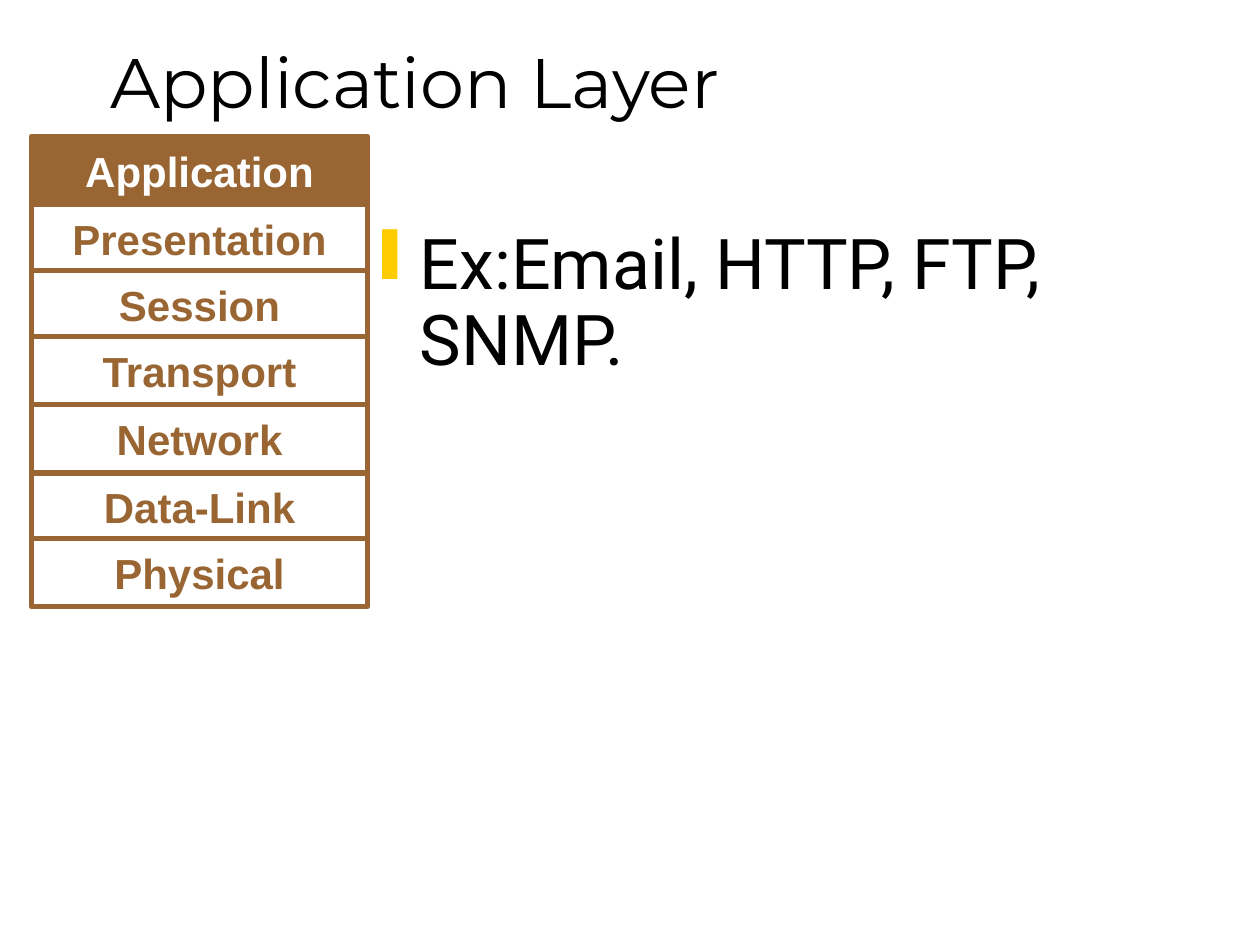
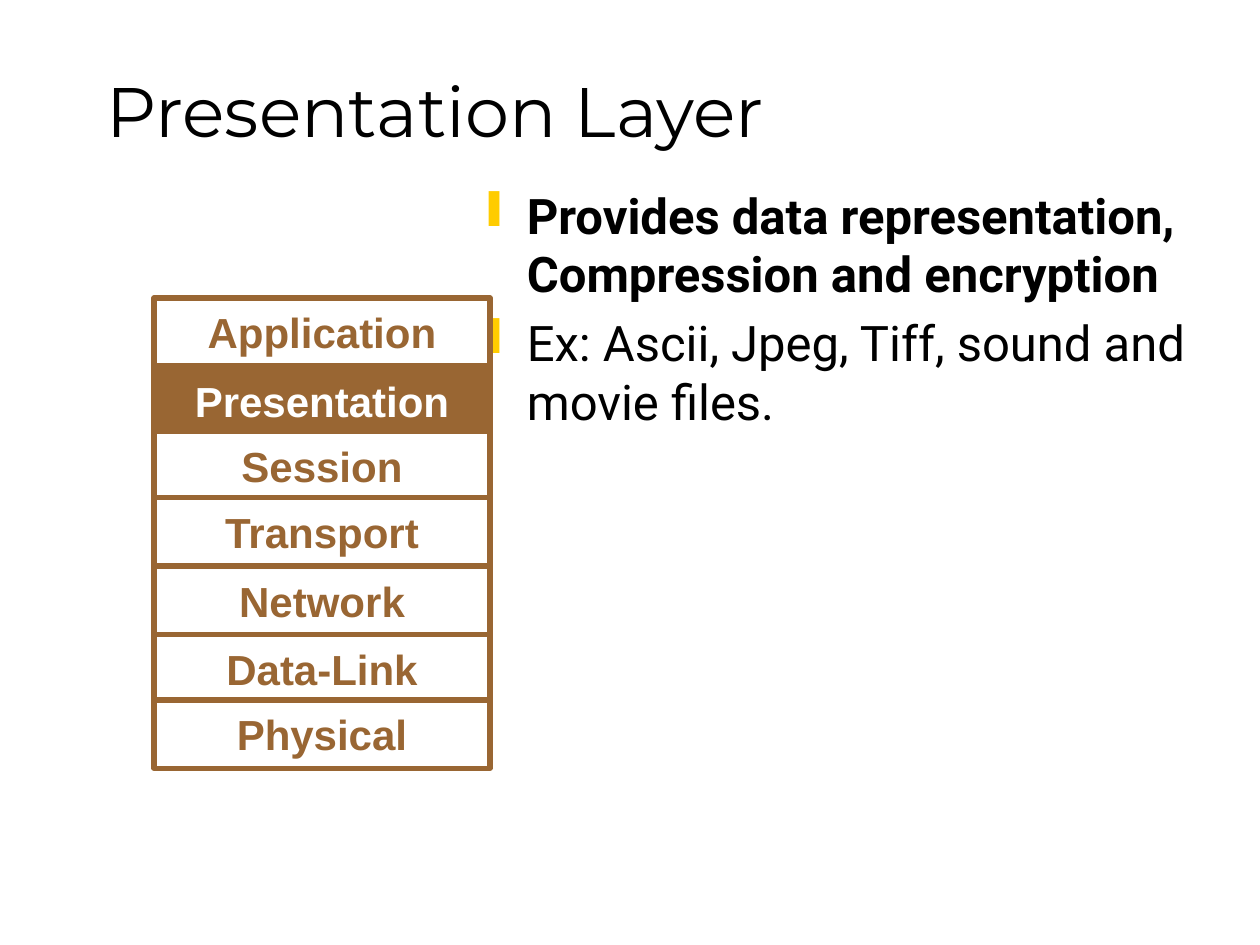
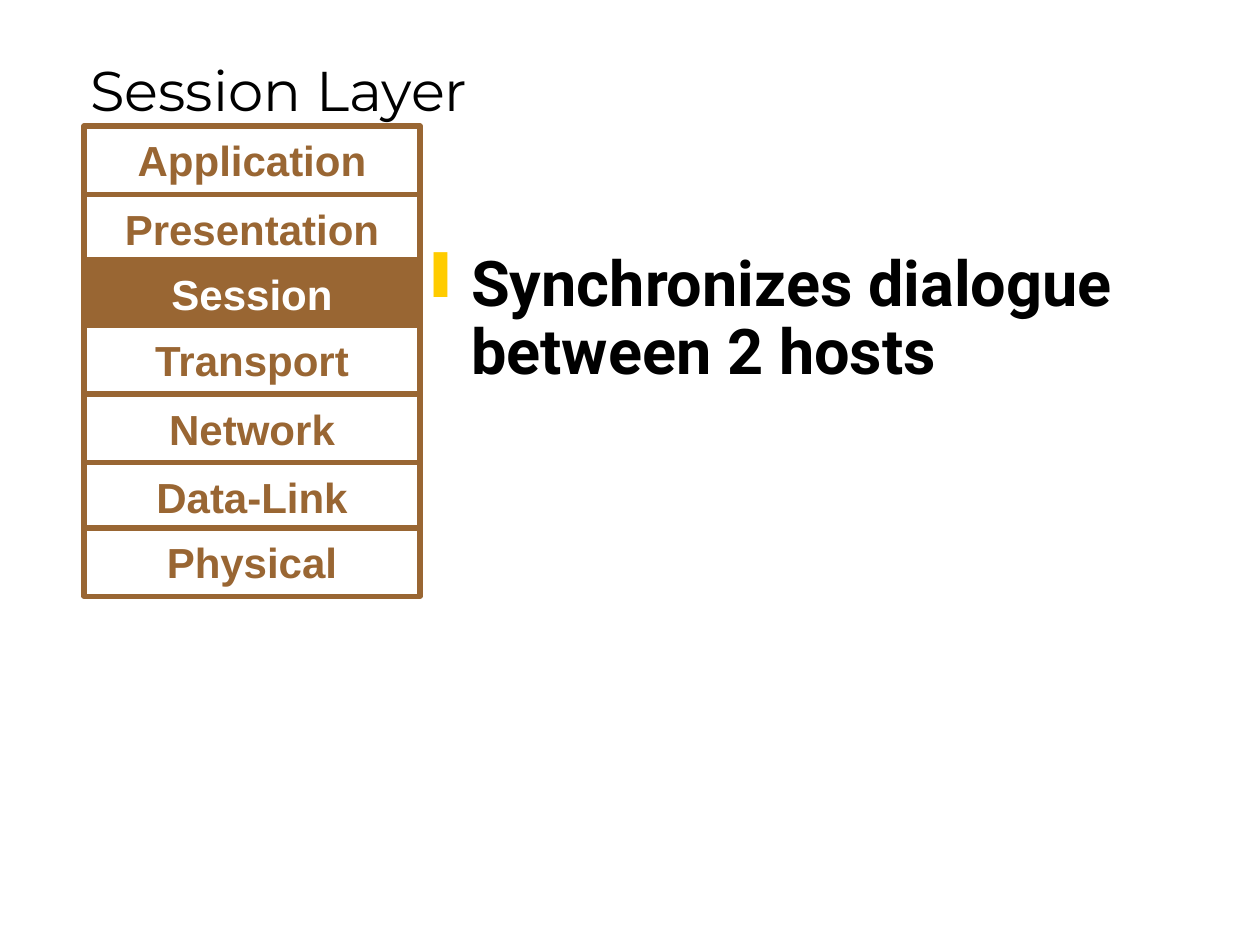
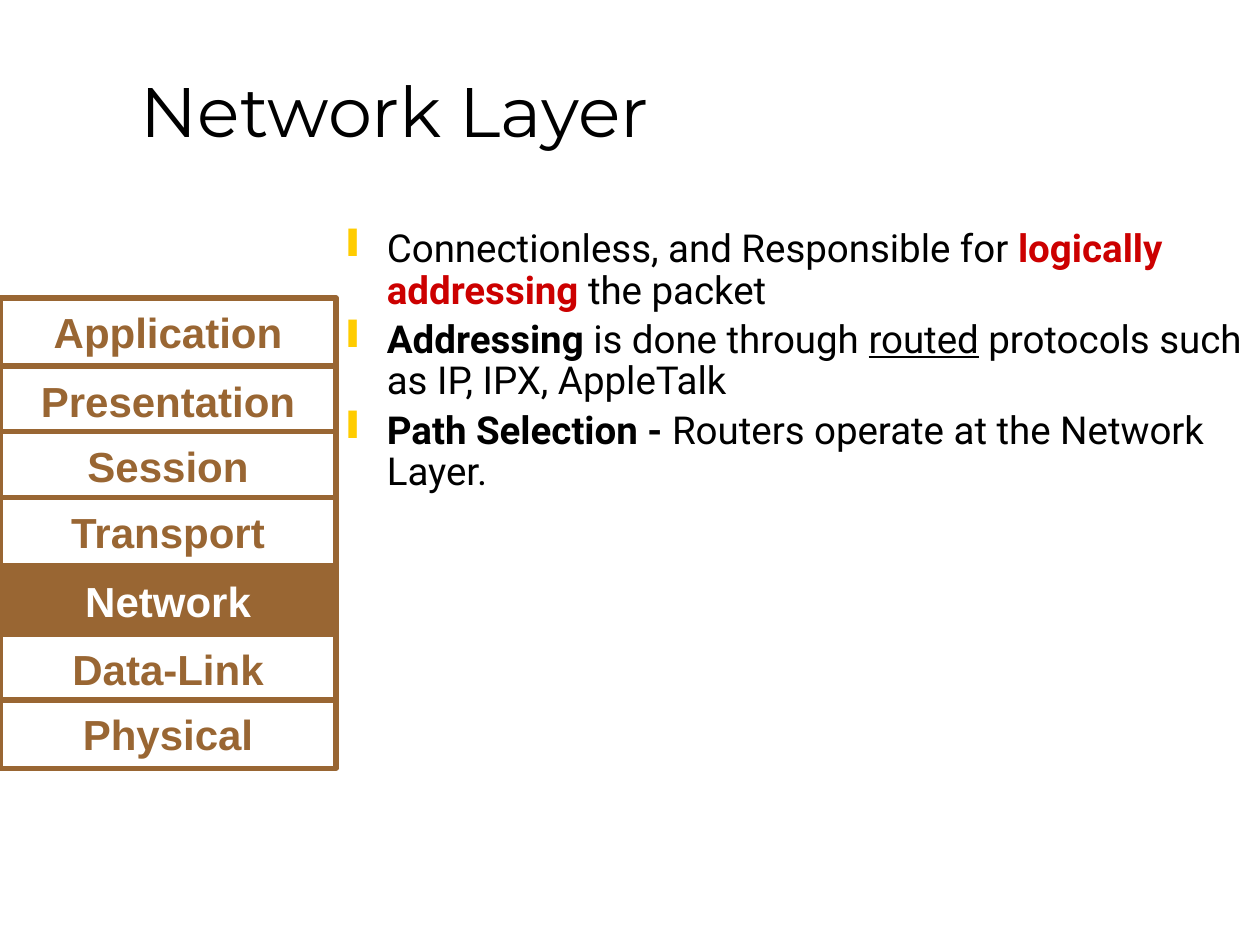
from pptx import Presentation
from pptx.dml.color import RGBColor
from pptx.enum.shapes import MSO_SHAPE
from pptx.enum.text import MSO_ANCHOR, PP_ALIGN
from pptx.util import Pt
from lxml.etree import SubElement
from pptx.oxml.ns import qn

COLORS = {
    "black": "000000",
    "white": "FFFFFF",
    "brown": "996633",
    "gold": "FFCC00",
    "red": "CC0000",
}
LAYERS = ["Application", "Presentation", "Session", "Transport",
          "Network", "Data-Link", "Physical"]
DROPS = [0, 39, 76.5, 114.25, 153.25, 192.25, 229.75]
BOLD = {"bold": True}
KEY = {"bold": True, "color": "red"}
LINED = {"line": True}


def tint(name):
    return RGBColor.from_string(COLORS[name])


def add_mark(para):
    props = para._p.get_or_add_pPr()
    props.set("marL", str(Pt(58.5)))
    props.set("indent", str(Pt(-22.5)))
    hue = SubElement(props, qn("a:buClr"))
    SubElement(hue, qn("a:srgbClr"), val=COLORS["gold"])
    SubElement(props, qn("a:buChar"), char="❙")


def style(font, face, size, color="black", bold=False, line=False):
    font.name = face
    font.size = Pt(size)
    font.bold = bold
    font.underline = line
    font.color.rgb = tint(color)


def write(shape, paras, anchor=MSO_ANCHOR.TOP, align=PP_ALIGN.LEFT,
          mark=False, pitch=1.0, **look):
    frame = shape.text_frame
    frame.word_wrap = True
    frame.vertical_anchor = anchor
    for index, runs in enumerate(paras):
        para = frame.add_paragraph() if index else frame.paragraphs[0]
        if mark:
            para.level = 1
            add_mark(para)
        para.alignment = align
        para.line_spacing = pitch
        para.space_before = Pt(0.2 * look["size"] if index else 0)
        for text, extra in runs:
            run = para.add_run()
            run.text = text
            style(run.font, **{**look, **extra})


def add_text(slide, left, top, width, height, paras, **look):
    box = slide.shapes.add_textbox(Pt(left), Pt(top), Pt(width), Pt(height))
    write(box, paras, **look)


def add_title(slide, text, left, top, size=40):
    add_text(slide, left, top, 612, 90, [[(text, {})]],
             anchor=MSO_ANCHOR.BOTTOM, face="Montserrat", size=size)


def add_body(slide, paras, left, top, size, right=720, pitch=0.9):
    add_text(slide, left, top, right - left, 412.5, paras,
             mark=True, pitch=pitch, face="Roboto", size=size)


def add_stack(slide, left, top, active):
    for layer, drop in zip(LAYERS, DROPS):
        fill, ink = ("brown", "white") if layer == active else ("white", "brown")
        box = slide.shapes.add_shape(MSO_SHAPE.RECTANGLE, Pt(left),
                                     Pt(top + drop), Pt(192), Pt(39))
        box.shadow.inherit = False
        box.fill.solid()
        box.fill.fore_color.rgb = tint(fill)
        box.line.color.rgb = tint("brown")
        box.line.width = Pt(3)
        write(box, [[(layer, {})]], anchor=MSO_ANCHOR.MIDDLE,
              align=PP_ALIGN.CENTER, face="Arial", size=24, color=ink, bold=True)


def main():
    deck = Presentation()
    deck.slide_width, deck.slide_height = Pt(720), Pt(540)

    def new_slide():
        return deck.slides.add_slide(deck.slide_layouts[6])

    slide = new_slide()
    add_title(slide, "Application Layer", 56, -16.5)
    add_body(slide, [[("Ex:Email, HTTP, FTP, SNMP.", {})]], 174.25, 127.5, 40)
    add_stack(slide, 18, 78, "Application")

    slide = new_slide()
    add_title(slide, "Presentation Layer", 54, 0)
    add_body(slide, [
        [("Provides data representation, Compression and encryption", BOLD)],
        [("Ex: Ascii, Jpeg, Tiff, sound and movie files.", {})],
    ], 235.5, 102.25, 28, right=698.5, pitch=1.0)
    add_stack(slide, 88, 170.25, "Presentation")

    slide = new_slide()
    add_title(slide, "Session Layer", 44.5, -16.5, size=32)
    add_body(slide, [[("Synchronizes dialogue between 2 hosts", BOLD)]],
             203.75, 140.5, 36)
    add_stack(slide, 48, 72, "Session")

    slide = new_slide()
    add_title(slide, "Network Layer", 73.5, 0)
    add_body(slide, [
        [("Connectionless, and Responsible for ", {}),
         ("logically addressing", KEY), (" the packet", {})],
        [("Addressing", BOLD), (" is done through ", {}), ("routed", LINED),
         (" protocols such as IP, IPX, AppleTalk", {})],
        [("Path Selection - ", BOLD),
         ("Routers operate at the Network Layer.", {})],
    ], 155.5, 127.5, 22)
    add_stack(slide, 0, 170.25, "Network")

    deck.save("out.pptx")


if __name__ == "__main__":
    main()
